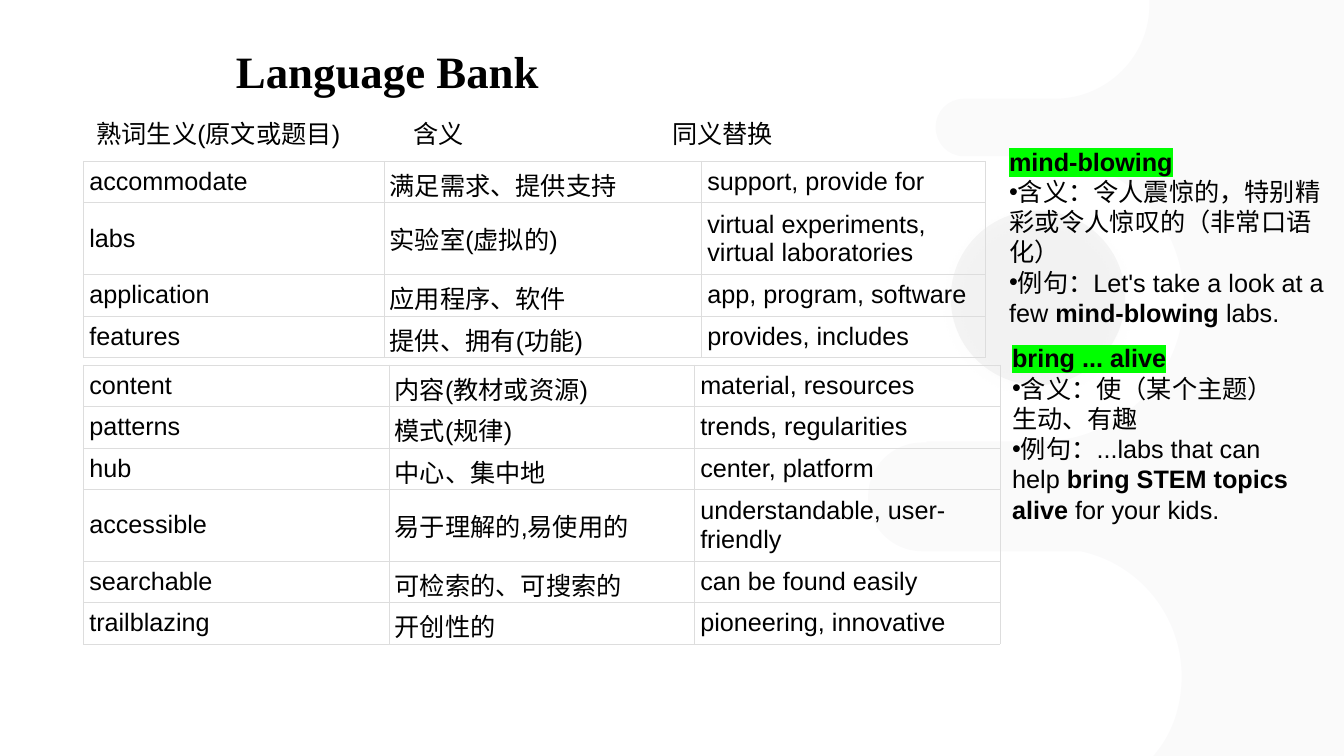
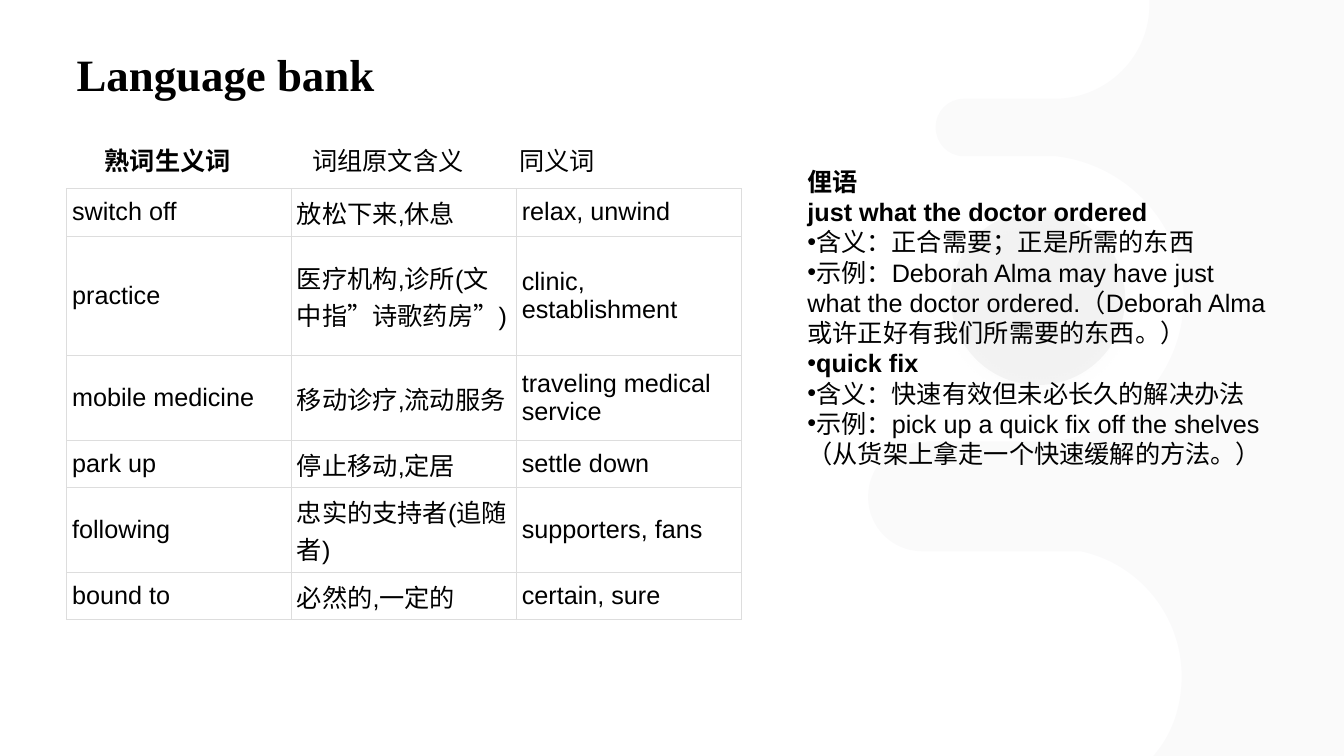
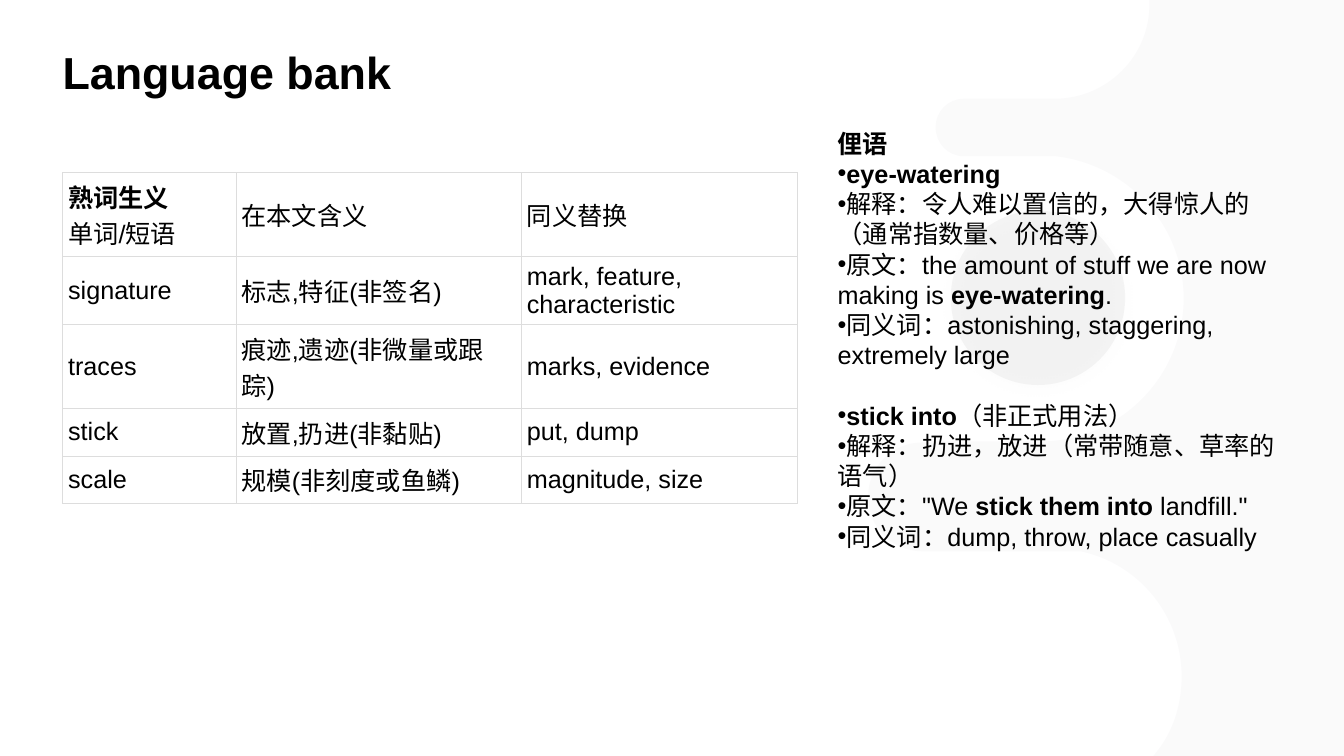
from lxml import etree
from pptx import Presentation, util as u
from pptx.dml.color import RGBColor
from pptx.enum import shapes, text
from pptx.oxml.ns import qn

PX = 9144
BLACK = RGBColor(0x00, 0x00, 0x00)
MAUVE = RGBColor(0xA5, 0x9F, 0xAD)
CHARCOAL = RGBColor(0x40, 0x40, 0x40)
GRID = RGBColor(0xDD, 0xDD, 0xDD)
MARKER = RGBColor(0x00, 0xFF, 0x00)
BODY_FONT = "Arial"
BODY_SIZE = u.Pt(18)
TITLE_SIZE = u.Pt(32)
LINE_PITCH = u.Pt(21.6)
CELL_INSET = u.Pt(4)
TIGHT_TOP = u.Pt(3.5)
TIGHT_ROW = 41

WAVE = [
    (1140, 0), (1333, 0), (1333, 750), (1144, 750), (1151, 741),
    (1165, 721, 1172, 697, 1172, 671), (1172, 610, 1129, 559, 1072, 547),
    (1067, 547), (915, 547),
    (885, 547, 861, 523, 861, 493), (861, 463, 885, 439, 915, 439),
    (919, 439), (919, 438), (1032, 438),
    (1110, 438, 1174, 374, 1174, 296), (1174, 223, 1118, 163, 1047, 155),
    (1032, 155), (956, 155),
    (940, 155, 928, 142, 928, 126), (928, 111, 940, 98, 956, 98),
    (969, 98), (1046, 98), (1098, 98, 1140, 56, 1140, 5),
]
DISC = (943, 209, 173, 173)

SLIDES = [
    {
        "title": ("Language Bank", "Times New Roman", (234, 18, 1057, 79)),
        "headings": {"box": (86, 112, 890, 40), "tabs": (314, 571),
                     "line": "熟词生义(原文或题目)\t含义\t同义替换"},
        "tables": [
            {"at": (83, 160), "cols": (298, 315, 281), "rows": (41, 71, 41, 41),
             "words": [
                 ("accommodate", "满足需求、提供支持", "support, provide for"),
                 ("labs", "实验室(虚拟的)", "virtual experiments, virtual laboratories"),
                 ("application", "应用程序、软件", "app, program, software"),
                 ("features", "提供、拥有(功能)", "provides, includes"),
             ]},
            {"at": (83, 362), "cols": (303, 303, 303), "rows": (41, 41, 41, 71, 41, 41),
             "words": [
                 ("content", "内容(教材或资源)", "material, resources"),
                 ("patterns", "模式(规律)", "trends, regularities"),
                 ("hub", "中心、集中地", "center, platform"),
                 ("accessible", "易于理解的,易使用的", "understandable, user-friendly"),
                 ("searchable", "可检索的、可搜索的", "can be found easily"),
                 ("trailblazing", "开创性的", "pioneering, innovative"),
             ]},
        ],
        "notes": [
            {"box": (991, 140, 346, 190), "marked": True, "lines": [
                "*mind-blowing*",
                "•含义：令人震惊的，特别精彩或令人惊叹的（非常口语化）",
                "•例句：Let's take a look at a few *mind-blowing* labs.",
            ]},
            {"box": (994, 335, 298, 192), "marked": True, "lines": [
                "*bring ... alive*",
                "•含义：使（某个主题）生动、有趣",
                "•例句：...labs that can help *bring STEM topics alive* for your kids.",
            ]},
        ],
    },
    {
        "title": ("Language bank", "Times New Roman", (76, 21, 1181, 79)),
        "headings": {"box": (94, 139, 514, 40), "tabs": (206, 411),
                     "line": "*熟词生义词*\t词组原文含义\t同义词"},
        "tables": [
            {"at": (66, 187), "cols": (223, 223, 223), "rows": (47, 119, 84, 47, 84, 47),
             "words": [
                 ("switch off", "放松下来,休息", "relax, unwind"),
                 ("practice", "医疗机构,诊所(文中指”诗歌药房”)", "clinic, establishment"),
                 ("mobile medicine", "移动诊疗,流动服务", "traveling medical service"),
                 ("park up", "停止移动,定居", "settle down"),
                 ("following", "忠实的支持者(追随者)", "supporters, fans"),
                 ("bound to", "必然的,一定的", "certain, sure"),
             ]},
        ],
        "notes": [
            {"box": (791, 160, 477, 313), "lines": [
                "*俚语*",
                "*just what the doctor ordered*",
                "•含义：正合需要；正是所需的东西",
                "•示例：Deborah Alma may have just what the doctor ordered."
                "（Deborah Alma 或许正好有我们所需要的东西。）",
                "•*quick fix*",
                "•含义：快速有效但未必长久的解决办法",
                "•示例：pick up a quick fix off the shelves（从货架上拿走一个快速缓解的方法。）",
            ]},
        ],
    },
    {
        "title": ("Language bank", "Arial", (62, 19, 1181, 79)),
        "tables": [
            {"at": (62, 171), "cols": (172, 283, 274), "rows": (83, 67, 83, 47, 47),
             "words": [
                 ("*熟词生义*\n单词/短语", "在本文含义", "同义替换"),
                 ("signature", "标志,特征(非签名)", "mark, feature, characteristic"),
                 ("traces", "痕迹,遗迹(非微量或跟踪)", "marks, evidence"),
                 ("stick", "放置,扔进(非黏贴)", "put, dump"),
                 ("scale", "规模(非刻度或鱼鳞)", "magnitude, size"),
             ]},
        ],
        "notes": [
            {"box": (821, 122, 465, 460), "gap_before": 5, "lines": [
                "*俚语*",
                "•*eye-watering*",
                "•解释：令人难以置信的，大得惊人的（通常指数量、价格等）",
                "•原文：the amount of stuff we are now making is *eye-watering*.",
                "•同义词：astonishing, staggering, extremely large",
                "•*stick into*（非正式用法）",
                "•解释：扔进，放进（常带随意、草率的语气）",
                "•原文：\"We *stick them into* landfill.\"",
                "•同义词：dump, throw, place casually",
            ]},
        ],
    },
]


def emu(lengths):
    return [length * PX for length in lengths]


def child(parent, tag, **attributes):
    return etree.SubElement(parent, qn(tag), {k: str(v) for k, v in attributes.items()})


def add_wave(slide):
    start, *rest = WAVE
    builder = slide.shapes.build_freeform(*emu(start), scale=1.0)
    builder.add_line_segments([emu(segment[-2:]) for segment in rest], close=True)
    wave = builder.convert_to_shape()
    sides = list(wave._element.iter(qn("a:lnTo")))
    for side, segment in zip(sides, rest):
        if len(segment) == 6:
            curve = etree.Element(qn("a:cubicBezTo"))
            for x, y in zip(emu(segment[::2]), emu(segment[1::2])):
                child(curve, "a:pt", x=x - wave.left, y=y - wave.top)
            side.getparent().replace(side, curve)
    return wave


def add_backdrop(slide):
    wave = add_wave(slide)
    disc = slide.shapes.add_shape(shapes.MSO_SHAPE.OVAL, *emu(DISC))
    layout_tree = slide.slide_layout.shapes._spTree
    for order, (part, colour) in enumerate(((wave, MAUVE), (disc, CHARCOAL))):
        part.shadow.inherit = False
        part.line.fill.background()
        part.fill.solid()
        part.fill.fore_color.rgb = colour
        child(part._element.spPr.find(qn("a:solidFill"))[0], "a:alpha", val=5000)
        part._element.nvSpPr.cNvPr.set("id", str(101 + order))
        layout_tree.insert(2 + order, part._element)
    shadow = child(disc._element.spPr.find(qn("a:effectLst")), "a:outerShdw",
                   blurRad=u.Pt(14), dist=u.Pt(3), dir=90 * 60000, rotWithShape=0)
    child(child(shadow, "a:srgbClr", val=BLACK), "a:alpha", val=23000)


def add_run(paragraph, words, bold=False, font=BODY_FONT, size=BODY_SIZE, marker=None):
    run = paragraph.add_run()
    run.text = words
    run.font.size = size
    run.font.bold = bold
    run.font.color.rgb = BLACK
    if marker:
        child(child(run.font._element, "a:highlight"), "a:srgbClr", val=marker)
    run.font.name = font


def write_lines(frame, lines, marked=False, pitch=None, gap_before=None):
    for number, line in enumerate(lines):
        paragraph = frame.add_paragraph() if number else frame.paragraphs[0]
        paragraph.alignment = text.PP_ALIGN.LEFT
        if pitch:
            paragraph.line_spacing = pitch
        if number and number == gap_before:
            paragraph.space_before = pitch
        if line.startswith("•"):
            properties = paragraph._p.get_or_add_pPr()
            properties.set("marL", "0")
            properties.set("indent", "0")
            child(properties, "a:buFont", typeface=BODY_FONT)
            child(properties, "a:buChar", char="•")
        for index, piece in enumerate(line.lstrip("•").split("*")):
            if piece:
                add_run(paragraph, piece, bold=index % 2 == 1,
                        marker=MARKER if marked and number == 0 else None)


def set_title(slide, words, font, box):
    title = slide.shapes.title
    title.left, title.top, title.width, title.height = emu(box)
    frame = title.text_frame
    frame.margin_left = frame.margin_top = frame.margin_right = frame.margin_bottom = 0
    frame.vertical_anchor = text.MSO_ANCHOR.BOTTOM
    frame.paragraphs[0].alignment = text.PP_ALIGN.LEFT
    add_run(frame.paragraphs[0], words, True, font, TITLE_SIZE)


def add_text(slide, box, lines, **style):
    frame = slide.shapes.add_textbox(*emu(box)).text_frame
    frame.word_wrap = True
    write_lines(frame, lines, **style)
    return frame


def add_headings(slide, box, tabs, line):
    frame = add_text(slide, box, [line])
    frame.vertical_anchor = text.MSO_ANCHOR.MIDDLE
    stops = child(frame.paragraphs[0]._p.get_or_add_pPr(), "a:tabLst")
    for tab in tabs:
        child(stops, "a:tab", pos=tab * PX, algn="l")


def add_words(slide, at, cols, rows, words):
    box = emu((*at, sum(cols), sum(rows)))
    table = slide.shapes.add_table(len(rows), len(cols), *box).table
    table.first_row = table.horz_banding = False
    for column, width in zip(table.columns, cols):
        column.width = width * PX
    for row, height, entries in zip(table.rows, rows, words):
        row.height = height * PX
        for index, (cell, entry) in enumerate(zip(row.cells, entries)):
            tight = index == 1 and height == TIGHT_ROW
            cell.margin_left = cell.margin_right = CELL_INSET
            cell.margin_top = TIGHT_TOP if tight else CELL_INSET
            cell.margin_bottom = 0 if tight else CELL_INSET
            cell.vertical_anchor = text.MSO_ANCHOR.MIDDLE
            for side in ("a:lnL", "a:lnR", "a:lnT", "a:lnB"):
                edge = child(cell._tc.get_or_add_tcPr(), side, w=u.Pt(0.5))
                child(child(edge, "a:solidFill"), "a:srgbClr", val=GRID)
            cell.fill.background()
            write_lines(cell.text_frame, entry.split("\n"))


def main():
    prs = Presentation()
    prs.slide_width, prs.slide_height = emu((1333, 750))
    for number, content in enumerate(SLIDES):
        slide = prs.slides.add_slide(prs.slide_layouts[5])
        if number == 0:
            add_backdrop(slide)
        set_title(slide, *content["title"])
        if "headings" in content:
            add_headings(slide, **content["headings"])
        for table in content["tables"]:
            add_words(slide, **table)
        for note in content["notes"]:
            add_text(slide, pitch=LINE_PITCH, **note)
    prs.save("out.pptx")


if __name__ == "__main__":
    main()
